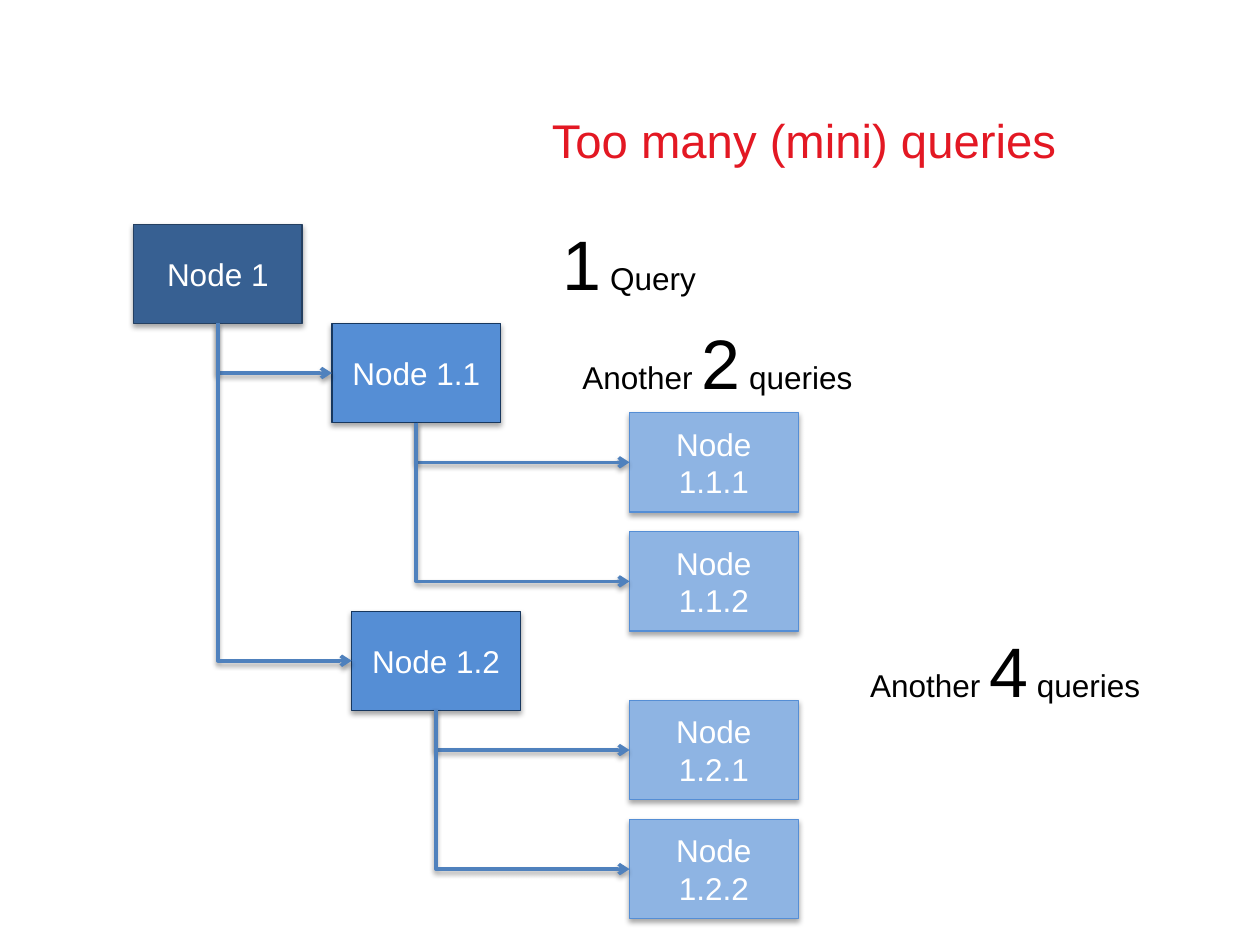
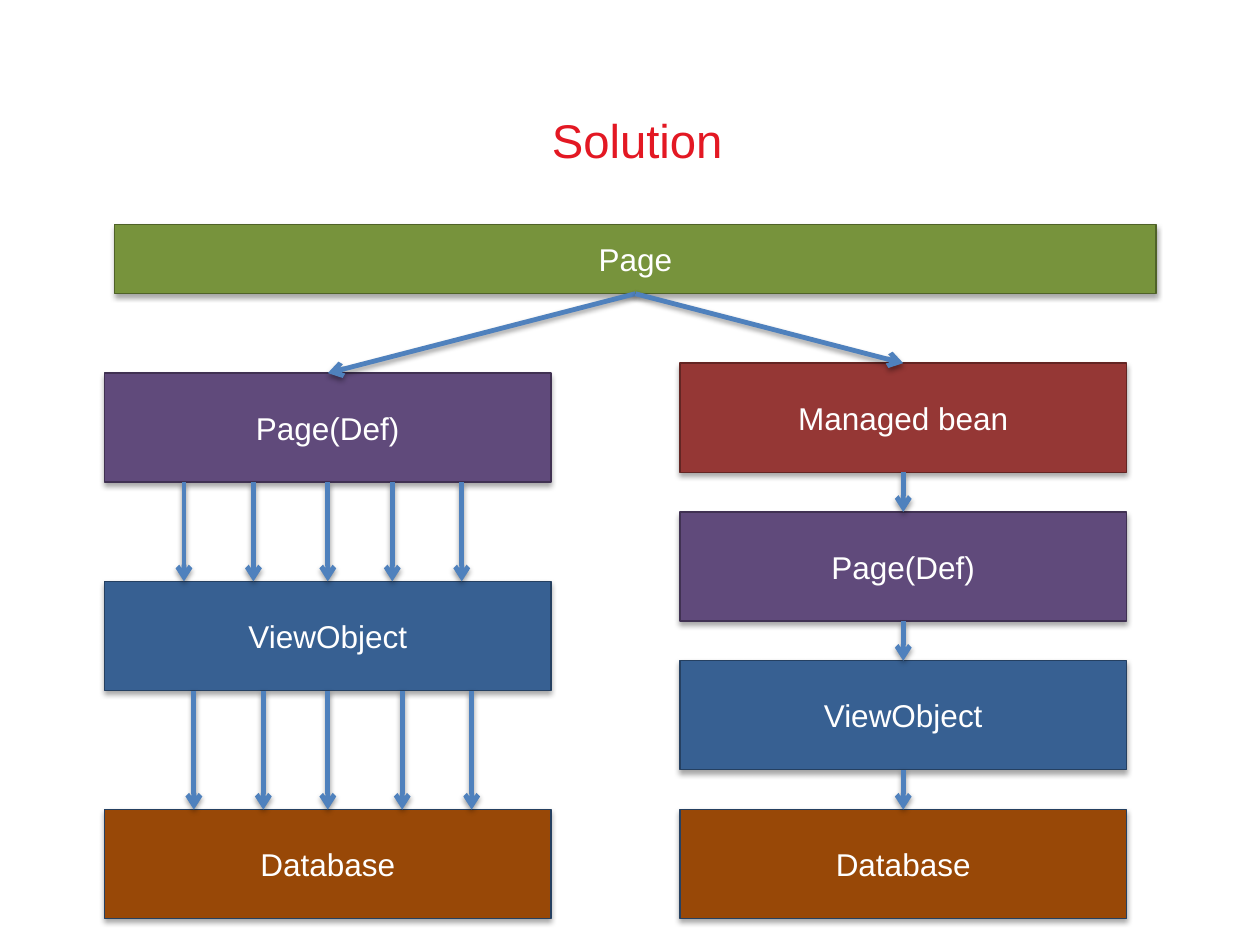
from dataclasses import dataclass

from lxml import etree
from pptx import Presentation, util as u
from pptx.dml.color import RGBColor
from pptx.enum import shapes, text
from pptx.oxml.ns import qn

WIDTH, HEIGHT = u.Inches(10), u.Inches(7.5)
CELL = u.Mm(2)  # side of one grid square
FONT = "Arial"
RED, BLACK, WHITE, ARROW = "E31823", "000000", "FFFFFF", "4F81BD"

# Fill and outline of each kind of box
ROOT, BRANCH, LEAF = ("376092", "254061"), ("558ED5", "17375E"), ("8EB4E3", "558ED5")
PAGE, BEAN, DEFINITION = ("77933C", "4F6228"), ("953735", "632523"), ("604A7B", "403152")
VIEW, DATABASE = ROOT, ("984807", "254061")


@dataclass
class Area:
    """Region whose parts are placed by column and row from its corner."""
    left: int
    top: int

    def x(self, column):
        return round(self.left + column * CELL)

    def y(self, row):
        return round(self.top + row * CELL)


@dataclass
class Box:
    """Rectangle measured in grid columns and rows."""
    column: float
    row: float
    columns: float
    rows: float

    @property
    def center(self):
        return self.column + self.columns / 2

    @property
    def middle(self):
        return self.row + self.rows / 2

    @property
    def bottom(self):
        return self.row + self.rows


def color(value):
    return RGBColor.from_string(value)


def add_run(paragraph, words, size, ink):
    run = paragraph.add_run()
    run.text = words
    run.font.name, run.font.size = FONT, u.Pt(size)
    run.font.color.rgb = color(ink)


def add_shadow(shape, opacity, distance):
    effects = etree.SubElement(shape._element.spPr, qn("a:effectLst"))
    shadow = etree.SubElement(effects, qn("a:outerShdw"), blurRad=str(u.Pt(3.1)),
                              dist=str(u.Pt(distance)), dir="5400000", rotWithShape="0")
    tint = etree.SubElement(shadow, qn("a:srgbClr"), val=BLACK)
    etree.SubElement(tint, qn("a:alpha"), val=str(opacity * 1000))


def add_title(slide, words):
    title = slide.shapes.add_textbox(round(WIDTH * 0.438), round(HEIGHT * 0.08),
                                     round(WIDTH * 0.526), round(HEIGHT * 0.144))
    frame = title.text_frame
    frame.word_wrap = True
    frame.vertical_anchor = text.MSO_ANCHOR.MIDDLE
    frame.margin_left = frame.margin_right = frame.margin_top = frame.margin_bottom = 0
    frame.paragraphs[0].line_spacing = u.Pt(28)
    add_run(frame.paragraphs[0], words, 27, RED)


def add_box(slide, area, box, words, style):
    fill, outline = style
    shape = slide.shapes.add_shape(
        shapes.MSO_SHAPE.RECTANGLE, area.x(box.column), area.y(box.row),
        round(box.columns * CELL), round(box.rows * CELL))
    shape.fill.solid()
    shape.fill.fore_color.rgb = color(fill)
    shape.line.color.rgb = color(outline)
    shape.line.width = u.Pt(0.75)
    add_shadow(shape, 35, 1.8)
    frame = shape.text_frame
    frame.word_wrap = True
    frame.vertical_anchor = text.MSO_ANCHOR.MIDDLE
    frame.paragraphs[0].alignment = text.PP_ALIGN.CENTER
    add_run(frame.paragraphs[0], words, 18, WHITE)


def style_arrow(connector, width):
    connector.line.color.rgb = color(ARROW)
    connector.line.width = u.Pt(width)
    etree.SubElement(connector.line._get_or_add_ln(), qn("a:tailEnd"), type="arrow")
    add_shadow(connector, 38, 1.6)


def add_arrow(slide, area, start, end):
    connector = slide.shapes.add_connector(
        shapes.MSO_CONNECTOR.STRAIGHT, area.x(start[0]), area.y(start[1]),
        area.x(end[0]), area.y(end[1]))
    style_arrow(connector, 2.75)


def add_branch(slide, area, parent, child):
    """Arrow that drops from the parent, then turns right into the child."""
    run = child.column - parent.center
    drop = child.middle - parent.bottom
    # A quarter turn swaps the sides of the frame around its centre
    left = parent.center + (run - drop) / 2
    top = parent.bottom + (drop - run) / 2
    connector = slide.shapes.add_connector(
        shapes.MSO_CONNECTOR.ELBOW, area.x(left), area.y(top),
        area.x(left + drop), area.y(top + run))
    properties = connector._element.spPr
    properties.find(qn("a:prstGeom")).set("prst", "bentConnector2")
    frame = properties.find(qn("a:xfrm"))
    frame.set("rot", "16200000")
    frame.set("flipH", "1")
    style_arrow(connector, 2)


def add_node_tree(slide, area):
    nodes = {}
    for number, column, row, style in (
            ("1", 0, 0, ROOT), ("1.1", 20, 10, BRANCH), ("1.2", 22, 39, BRANCH),
            ("1.1.1", 50, 19, LEAF), ("1.1.2", 50, 31, LEAF),
            ("1.2.1", 50, 48, LEAF), ("1.2.2", 50, 60, LEAF)):
        nodes[number] = Box(column, row, 17, 10)
        add_box(slide, area, nodes[number], f"Node {number}", style)
    for number, node in nodes.items():
        parent = number.rpartition(".")[0]
        if parent:
            add_branch(slide, area, nodes[parent], node)


def add_query_counts(slide, area):
    for column, row, columns, wrap, before, count, after in (
            (42, -1, 16, False, "", "1", " Query"),
            (44, 9, 30, False, "Another ", "2", " queries"),
            (73, 40, 35, True, "Another ", "4", " queries")):
        label = slide.shapes.add_textbox(area.x(column), area.y(row),
                                         columns * CELL, round(9.8 * CELL))
        frame = label.text_frame
        frame.word_wrap = wrap
        frame.auto_size = text.MSO_AUTO_SIZE.SHAPE_TO_FIT_TEXT
        for words, size in ((before, 18), (count, 40), (after, 18)):
            if words:
                add_run(frame.paragraphs[0], words, size, BLACK)


def add_layers(slide, area, column, layers):
    """Stack of equal boxes; gives back the boxes from top to bottom."""
    boxes = []
    for row, words, style in layers:
        boxes.append(Box(column, row, 45, 11))
        add_box(slide, area, boxes[-1], words, style)
    return boxes


def add_solution(slide, area):
    page = Box(1, 0, 105, 7)
    add_box(slide, area, page, "Page", PAGE)

    # Left: many calls between layers
    many = add_layers(slide, area, 0, (
        (15, "Page(Def)", DEFINITION), (36, "ViewObject", VIEW),
        (59, "Database", DATABASE)))
    calls = ((8, 15, 22.5, 29, 36), (9, 16, 22.5, 30, 37))
    for upper, lower, columns in zip(many, many[1:], calls):
        for column in columns:
            add_arrow(slide, area, (column, upper.bottom), (column, lower.row))

    # Right: one call between layers
    names = (("Managed bean", BEAN), ("Page(Def)", DEFINITION),
             ("ViewObject", VIEW), ("Database", DATABASE))
    single = add_layers(slide, area, 58, [
        (14 + 15 * index, *name) for index, name in enumerate(names)])
    for upper, lower in zip(single, single[1:]):
        add_arrow(slide, area, (upper.center, upper.bottom), (lower.center, lower.row))

    # From the page to both stacks
    for stack in (many, single):
        add_arrow(slide, area, (page.center, page.bottom), (stack[0].center, stack[0].row))


def main():
    presentation = Presentation()
    presentation.slide_width, presentation.slide_height = WIDTH, HEIGHT
    blank = presentation.slide_layouts[6]
    top = u.Inches(1.78)

    slide = presentation.slides.add_slide(blank)
    add_title(slide, "Too many (mini) queries")
    tree_area = Area(u.Inches(1.06), top)
    add_node_tree(slide, tree_area)
    add_query_counts(slide, tree_area)

    slide = presentation.slides.add_slide(blank)
    add_title(slide, "Solution")
    add_solution(slide, Area(u.Inches(0.83), top))

    presentation.save("out.pptx")


if __name__ == "__main__":
    main()
